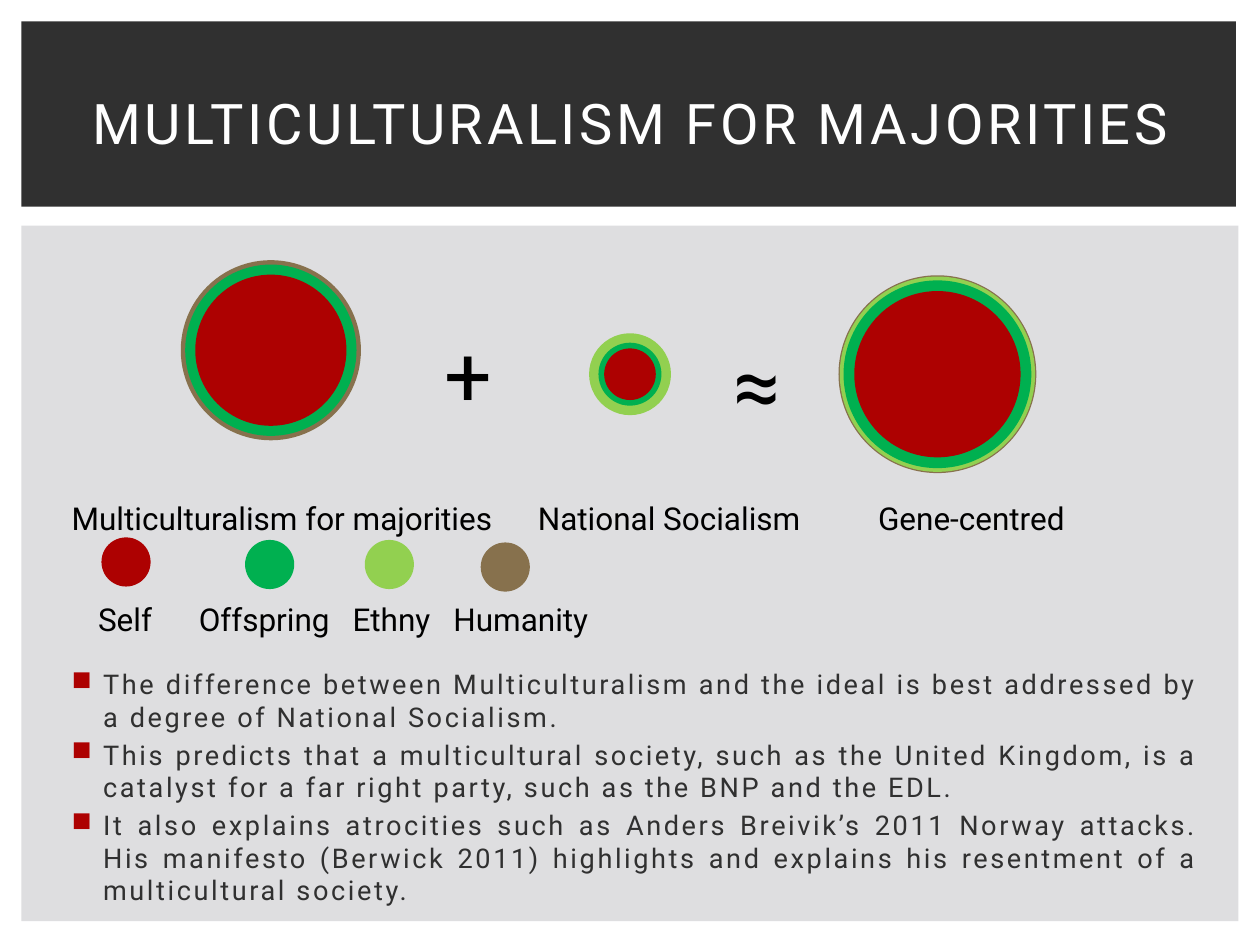
"""Builds the slide "Multiculturalism for majorities" with concentric circle diagrams."""
import pptx
import pptx.dml.color
import pptx.enum.shapes
import pptx.enum.text
import pptx.oxml.ns
import pptx.util
from lxml import etree

Inches = pptx.util.Inches
Pt = pptx.util.Pt
SHAPE = pptx.enum.shapes.MSO_SHAPE
ALIGN = pptx.enum.text.PP_ALIGN
ANCHOR = pptx.enum.text.MSO_ANCHOR
AUTO = pptx.enum.text.MSO_AUTO_SIZE
qn = pptx.oxml.ns.qn

FONT = "Roboto"
COLORS = {
    "panel": "DEDEE0",
    "dark": "303030",
    "white": "FFFFFF",
    "black": "000000",
    "self": "AD0101",
    "offspring": "00B050",
    "ethny": "92D050",
    "humanity": "87714D",
}
DIAGRAMS = [
    (2.15, 2.78, [("humanity", 1.43), ("offspring", 1.36), ("self", 1.2)]),
    (7.44, 2.97, [("humanity", 1.57), ("ethny", 1.55), ("offspring", 1.49), ("self", 1.32)]),
    (5.0, 2.97, [("ethny", 0.65), ("offspring", 0.5), ("self", 0.41)]),
]
LEGEND = [
    ("self", 1.0, 4.46),
    ("offspring", 2.14, 4.48),
    ("ethny", 3.09, 4.48),
    ("humanity", 4.01, 4.5),
]
POINTS = [
    "The difference between Multiculturalism and the ideal is best addressed by "
    "a degree of National Socialism.",
    "This predicts that a multicultural society, such as the United Kingdom, is a "
    "catalyst for a far right party, such as the BNP and the EDL.",
    "It also explains atrocities such as Anders Breivik’s 2011 Norway attacks. "
    "His manifesto (Berwick 2011) highlights and explains his resentment of a "
    "multicultural society.",
]


def rgb(name):
    return pptx.dml.color.RGBColor.from_string(COLORS[name])


def add_shape(s, kind, color, x, y, w, h):
    sp = s.shapes.add_shape(kind, Inches(x), Inches(y), Inches(w), Inches(h))
    sp.shadow.inherit = False
    sp.fill.solid()
    sp.fill.fore_color.rgb = rgb(color)
    sp.line.fill.background()


def add_circle(s, color, cx, cy, d):
    add_shape(s, SHAPE.OVAL, color, cx - d / 2, cy - d / 2, d, d)


def add_text(s, lines, x, y, w, h, size, color="black", spacing=0, grow=True):
    tf = s.shapes.add_textbox(Inches(x), Inches(y), Inches(w), Inches(h)).text_frame
    tf.word_wrap = True
    tf.auto_size = AUTO.SHAPE_TO_FIT_TEXT if grow else AUTO.NONE
    for i, line in enumerate(lines):
        p = tf.paragraphs[0] if i == 0 else tf.add_paragraph()
        r = p.add_run()
        r.text = line
        p.font.name = FONT
        p.font.size = Pt(size)
        p.font.color.rgb = rgb(color)
        if spacing:
            r.font.size = Pt(size)
            r._r.get_or_add_rPr().set("spc", str(int(spacing * 100)))
    return tf


def set_tabs(p, stops):
    pPr = p._p.get_or_add_pPr()
    tabs = etree.Element(qn("a:tabLst"))
    for stop in stops:
        etree.SubElement(tabs, qn("a:tab"), pos=str(Inches(stop)), algn="l")
    pPr.insert(0, tabs)


def set_bullet(p):
    pPr = p._p.get_or_add_pPr()
    pPr.set("marL", str(Inches(0.3)))
    pPr.set("indent", str(Inches(-0.25)))
    clr = etree.Element(qn("a:buClr"))
    etree.SubElement(clr, qn("a:srgbClr"), val=COLORS["self"])
    char = etree.Element(qn("a:buChar"), char="■")
    default = pPr.find(qn("a:defRPr"))
    default.addprevious(clr)
    default.addprevious(char)


def add_title(s, text):
    tf = add_text(s, [text], 0.42, 0.39, 9.17, 1.15, 32, "white", 2, grow=False)
    tf.vertical_anchor = ANCHOR.MIDDLE
    tf.paragraphs[0].alignment = ALIGN.CENTER


def add_points(s):
    tf = add_text(s, POINTS, 0.42, 5.25, 9.19, 1.73, 15.5, "dark", 1.5, grow=False)
    for p in tf.paragraphs:
        p.alignment = ALIGN.JUSTIFY
        p.space_before = Pt(3)
        set_bullet(p)


def add_tabbed(s, text, stops, x, y, w, h):
    tf = add_text(s, [text], x, y, w, h, 18)
    set_tabs(tf.paragraphs[0], stops)


def main():
    prs = pptx.Presentation()
    prs.slide_width = Inches(10)
    prs.slide_height = Inches(7.5)
    s = prs.slides.add_slide(prs.slide_layouts[6])

    add_shape(s, SHAPE.RECTANGLE, "panel", 0.17, 1.79, 9.66, 5.52)
    add_shape(s, SHAPE.RECTANGLE, "dark", 0.17, 0.17, 9.64, 1.47)
    add_points(s)
    add_title(s, "MULTICULTURALISM FOR MAJORITIES")

    for cx, cy, rings in DIAGRAMS:
        for color, d in rings:
            add_circle(s, color, cx, cy, d)
    add_tabbed(s, "Multiculturalism for majorities\tNational Socialism\tGene-centred",
               [3.7, 6.4], 0.47, 3.91, 8.99, 0.4)
    add_text(s, ["+"], 3.43, 2.51, 0.55, 0.91, 48)
    add_text(s, ["≈"], 5.72, 2.59, 0.47, 0.91, 48)

    for color, cx, cy in LEGEND:
        add_circle(s, color, cx, cy, 0.39)
    add_tabbed(s, "\tSelf\tOffspring\tEthny\tHumanity",
               [0.11, 0.91, 2.13, 2.93], 0.57, 4.71, 4.4, 0.4)

    prs.save("out.pptx")


if __name__ == "__main__":
    main()
